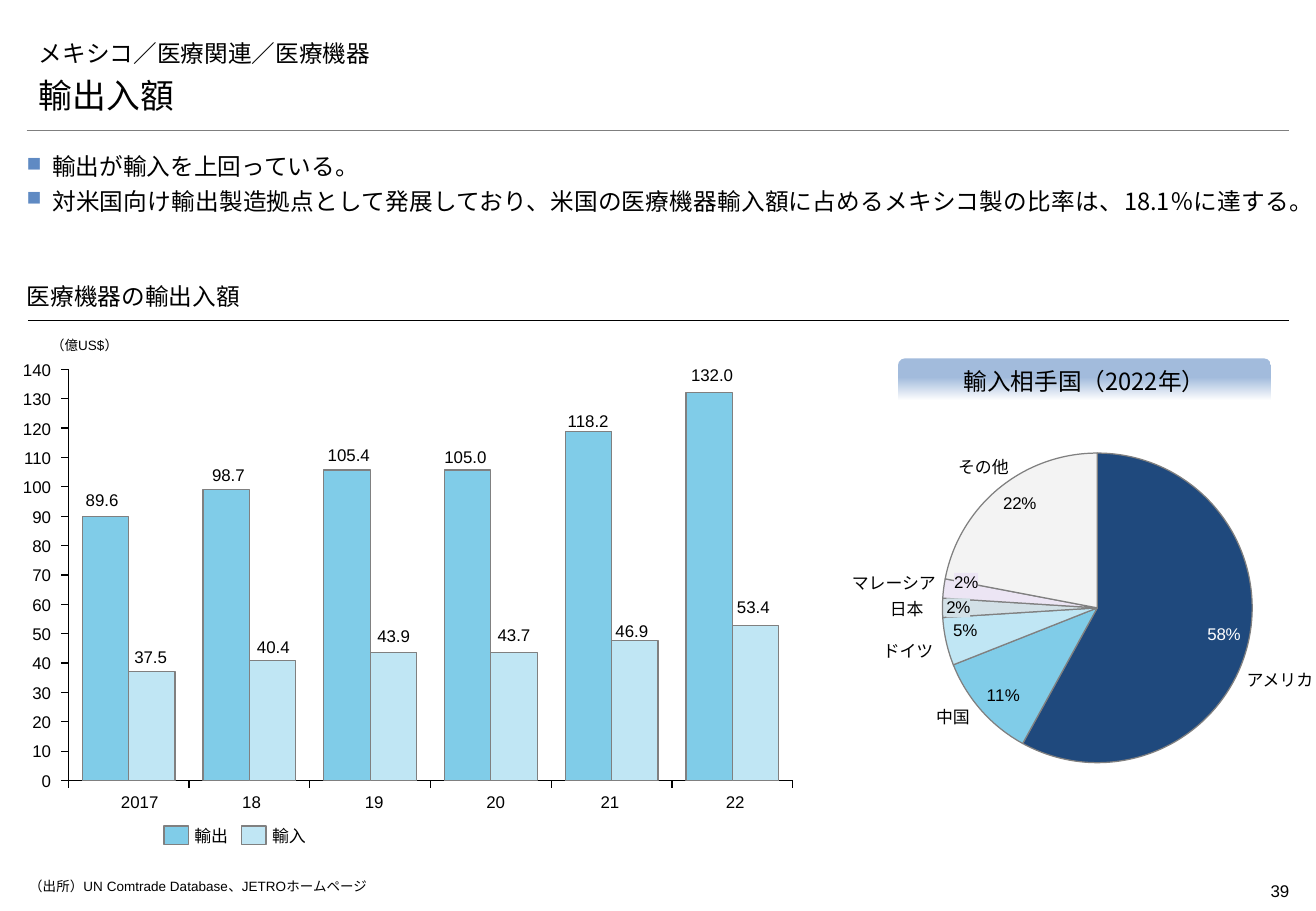
import pptx
import pptx.chart.data
import pptx.dml.color
import pptx.enum.chart
import pptx.enum.shapes
import pptx.enum.text
import pptx.oxml
import pptx.oxml.ns
import pptx.util
import lxml.etree

EMU_PER_PX = 9144
COLORS = {
    "text": "000000", "rule": "7F7F7F", "outline": "808080", "bullet": "5F8AC3",
    "export": "80CCE8", "import": "C0E6F4", "banner": "A2BBDC", "white": "FFFFFF",
    "usa": "1F497D", "japan": "D2E0E6", "malaysia": "ECE5F4", "other": "F3F3F3",
}
ARIAL, HEADING, GOTHIC = "Arial", "Montserrat", "Noto Sans CJK JP"
ALIGN = pptx.enum.text.PP_ALIGN
ANCHOR = pptx.enum.text.MSO_ANCHOR
SHAPE = pptx.enum.shapes.MSO_SHAPE
CHART = pptx.enum.chart
QN = pptx.oxml.ns.qn


def px(value):
    return pptx.util.Emu(round(value * EMU_PER_PX))


def rgb(name):
    return pptx.dml.color.RGBColor.from_string(COLORS[name])


def add_span(para, text, size, font):
    span = para.add_run()
    span.text = text
    span.font.size = pptx.util.Pt(size)
    span.font.color.rgb = rgb("text")
    span.font.name = font
    east_asian = lxml.etree.SubElement(span._r.get_or_add_rPr(), QN("a:ea"))
    east_asian.set("typeface", GOTHIC)


def add_text(page, box, text, size=10, font=ARIAL, align=ALIGN.LEFT,
             anchor=ANCHOR.MIDDLE, insets=(0, 0, 0, 0), wrap=False):
    shape = page.shapes.add_textbox(*map(px, box))
    frame = shape.text_frame
    frame.word_wrap = wrap
    frame.vertical_anchor = anchor
    (frame.margin_left, frame.margin_top,
     frame.margin_right, frame.margin_bottom) = map(px, insets)
    para = frame.paragraphs[0]
    para.alignment = align
    if text:
        add_span(para, text, size, font)
    return shape


def add_rule(page, left, right, y, color, width):
    rule = page.shapes.add_connector(
        pptx.enum.shapes.MSO_CONNECTOR.STRAIGHT, px(left), px(y), px(right), px(y))
    rule.line.color.rgb = rgb(color)
    rule.line.width = pptx.util.Pt(width)
    lxml.etree.SubElement(rule._element.spPr, QN("a:effectLst"))


def set_outline(line, color):
    line.color.rgb = rgb(color)
    line.width = pptx.util.Pt(0.75)


def set_plot_area(chart, x, y, width, height):
    area = chart._chartSpace.chart.plotArea
    for layout in area.findall(QN("c:layout")):
        area.remove(layout)
    layout = lxml.etree.Element(QN("c:layout"))
    manual = lxml.etree.SubElement(layout, QN("c:manualLayout"))
    for tag, value in (("layoutTarget", "inner"), ("xMode", "edge"), ("yMode", "edge"),
                       ("x", x), ("y", y), ("w", width), ("h", height)):
        lxml.etree.SubElement(manual, QN("c:" + tag)).set("val", str(value))
    area.insert(0, layout)


def add_plain_chart(page, box, kind, series):
    data = pptx.chart.data.CategoryChartData()
    data.categories = ["1", "2", "3", "4", "5", "6"]
    for name, values in series:
        data.add_series(name, values)
    chart = page.shapes.add_chart(kind, *map(px, box), data).chart
    chart.has_legend = chart.has_title = False
    chart.font.size = pptx.util.Pt(10)
    chart.font.name = ARIAL
    chart.font.color.rgb = rgb("text")
    return chart


def add_header(page, box):
    left, top, width, height = box
    insets = (10, 5, 10, 5)
    add_text(page, (left, top, width, 34), "メキシコ／医療関連／医療機器", 14, HEADING,
             anchor=ANCHOR.BOTTOM, insets=insets, wrap=True)
    add_text(page, (left, top + 30, width, 44), "輸出入額", 20, HEADING,
             anchor=ANCHOR.BOTTOM, insets=insets, wrap=True)
    add_rule(page, left, left + width, top + height, "rule", 0.25)


def add_bullets(page, box):
    frame = add_text(page, box, "", anchor=ANCHOR.TOP, wrap=True).text_frame
    points = (
        ("輸出が輸入を上回っている。", ARIAL),
        ("対米国向け輸出製造拠点として発展しており、米国の医療機器輸入額に占める"
         "メキシコ製の比率は、18.1％に達する。", GOTHIC),
    )
    for index, (text, font) in enumerate(points):
        para = frame.add_paragraph() if index else frame.paragraphs[0]
        settings = para._p.get_or_add_pPr()
        settings.set("marL", str(px(21)))
        settings.set("indent", str(-px(21)))
        color = lxml.etree.SubElement(settings, QN("a:buClr"))
        lxml.etree.SubElement(color, QN("a:srgbClr")).set("val", COLORS["bullet"])
        lxml.etree.SubElement(settings, QN("a:buSzPct")).set("val", "85000")
        lxml.etree.SubElement(settings, QN("a:buChar")).set("char", "■")
        para.alignment = ALIGN.JUSTIFY
        para.line_spacing = 1.1
        para.space_after = pptx.util.Pt(2)
        add_span(para, text, 14, font)


def add_section_heading(page, box):
    left, top, width, height = box
    add_text(page, box, "医療機器の輸出入額", 14, HEADING, anchor=ANCHOR.BOTTOM,
             insets=(0, 5, 0, 8), wrap=True)
    add_rule(page, left + 1, left + width, top + height + 1, "text", 0.75)


def add_trade_chart(page, box):
    left, top, width, height = box
    chart = add_plain_chart(page, box, CHART.XL_CHART_TYPE.COLUMN_CLUSTERED, (
        ("Series 1", (68, 75, 80, 80, 90, 100)),
        ("Series 2", (28, 31, 33, 33, 36, 40))))
    set_plot_area(chart, 0.015, 0.025, 0.971, 0.949)
    plot = chart.plots[0]
    plot.gap_width, plot.overlap, plot.vary_by_categories = 60, 0, False
    for series, color in zip(plot.series, ("export", "import")):
        series.format.fill.solid()
        series.format.fill.fore_color.rgb = rgb(color)
        set_outline(series.format.line, "outline")
    for axis in (chart.category_axis, chart.value_axis):
        axis.has_major_gridlines = False
        axis.major_tick_mark = CHART.XL_TICK_MARK.OUTSIDE
        axis.tick_label_position = CHART.XL_TICK_LABEL_POSITION.NONE
        set_outline(axis.format.line, "text")
    chart.value_axis.minimum_scale = 0
    chart.value_axis.maximum_scale = 106
    chart.value_axis.major_unit = 7.57

    add_text(page, (left - 5, top - 23, 75, 24), "（億US$）", 8, wrap=True)
    for step in range(15):
        add_text(page, (left - 45, top + 339 - step * 338 / 14, 40, 17),
                 str(step * 10), align=ALIGN.RIGHT)
    for year, center in zip(("2017", "18", "19", "20", "21", "22"),
                            (68, 160, 261, 361, 455, 558)):
        add_text(page, (left + center - 25, top + height, 50, 17), year,
                 align=ALIGN.CENTER, anchor=ANCHOR.TOP)
    bar_labels = (
        ("89.6", 37, 108), ("98.7", 141, 87), ("105.4", 240, 71),
        ("105.0", 336, 72), ("118.2", 437, 43), ("132.0", 539, 5),
        ("37.5", 77, 237), ("40.4", 178, 229), ("43.9", 277, 220),
        ("43.7", 376, 219), ("46.9", 473, 216), ("53.4", 573, 196),
    )
    for text, center, offset in bar_labels:
        add_text(page, (left + center - 30, top + offset, 60, 17), text,
                 align=ALIGN.CENTER, anchor=ANCHOR.BOTTOM, insets=(2, 0, 2, 0))
    for index, (name, color) in enumerate((("輸出", "export"), ("輸入", "import"))):
        key_left = left + 88 + index * 64
        key = page.shapes.add_shape(SHAPE.RECTANGLE, px(key_left), px(top + 385), px(20), px(15))
        key.shadow.inherit = False
        key.fill.solid()
        key.fill.fore_color.rgb = rgb(color)
        set_outline(key.line, "outline")
        add_text(page, (key_left + 25, top + 385, 36, 17), name)


def style_slice_label(point, font_color, fill, shift, number_format):
    label = point.data_label
    label.font.size = pptx.util.Pt(10)
    label.font.color.rgb = rgb(font_color)
    label.position = CHART.XL_LABEL_POSITION.INSIDE_END
    namespaces = pptx.oxml.ns.nsdecls("c", "a")
    parts = [f'<c:layout {namespaces}><c:manualLayout><c:x val="{shift[0]}"/>'
             f'<c:y val="{shift[1]}"/></c:manualLayout></c:layout>',
             f'<c:numFmt {namespaces} formatCode="{number_format}" sourceLinked="0"/>']
    element = label._dLbl
    if fill:
        for blank in element.findall(QN("c:spPr")):
            element.remove(blank)
        parts.append(f'<c:spPr {namespaces}><a:solidFill><a:srgbClr val="{COLORS[fill]}"/>'
                     '</a:solidFill></c:spPr>')
    for position, part in enumerate(parts, 1):
        element.insert(position, pptx.oxml.parse_xml(part))


def add_partner_chart(page, box):
    left, top, width, height = box
    banner = page.shapes.add_shape(SHAPE.ROUND_2_SAME_RECTANGLE,
                                   px(left - 25), px(top - 69), px(307), px(35))
    banner.shadow.inherit = False
    banner.line.fill.background()
    banner.fill.gradient()
    banner.fill.gradient_angle = 270
    for stop, color, place in zip(banner.fill.gradient_stops, ("banner", "white"), (0.45, 1)):
        stop.color.rgb = rgb(color)
        stop.position = place
    banner.text_frame.vertical_anchor = ANCHOR.MIDDLE
    para = banner.text_frame.paragraphs[0]
    para.alignment = ALIGN.CENTER
    add_span(para, "輸入相手国（2022年）", 14, GOTHIC)

    chart = add_plain_chart(page, box, CHART.XL_CHART_TYPE.PIE,
                            (("Series 1", (58, 11, 5, 2, 2, 22)),))
    set_plot_area(chart, 0.041, 0.033, 0.926, 0.934)
    series = chart.plots[0].series[0]
    for index, color in enumerate(("usa", "export", "import", "japan", "malaysia", "other")):
        point = series.points[index]
        point.format.fill.solid()
        point.format.fill.fore_color.rgb = rgb(color)
        set_outline(point.format.line, "outline")
    labels = series.data_labels
    labels.show_value = True
    labels.number_format = '#,##0"%"'
    labels.number_format_is_linked = False
    labels.position = CHART.XL_LABEL_POSITION.INSIDE_END
    for index, font_color, fill, shift in (
            (0, "white", None, (0, 0)), (3, "text", "japan", (-0.01, 0)),
            (4, "text", "malaysia", (0.01, -0.05))):
        style_slice_label(series.points[index], font_color, fill, shift,
                          "#,##0&quot;%&quot;")

    add_text(page, (left + 262, top + 187, 57, 17), "アメリカ")
    for country, right, offset in (("中国", 34, 218), ("日本", -4, 129), ("ドイツ", 4, 163),
                                   ("マレーシア", 6, 107), ("その他", 66, 12)):
        add_text(page, (left + right - 85, top + offset, 85, 17), country, align=ALIGN.RIGHT)


def add_footer(page, box):
    left, top, width, height = box
    source = add_text(page, (left + 2, top + 3, 748, 24),
                      "（出所）UN Comtrade Database、JETROホームページ", 8,
                      anchor=ANCHOR.TOP, wrap=True)
    settings = source.text_frame.paragraphs[0]._p.get_or_add_pPr()
    settings.set("marL", str(px(37)))
    settings.set("indent", str(-px(37)))
    add_text(page, (left + width - 79, top, 79, height), "39", align=ALIGN.RIGHT,
             anchor=ANCHOR.TOP, insets=(0, 5, 0, 5), wrap=True)


def main():
    deck = pptx.Presentation()
    deck.slide_width, deck.slide_height = px(1083), px(750)
    page = deck.slides.add_slide(deck.slide_layouts[6])
    add_header(page, (22, 26, 1039, 81))
    add_bullets(page, (22, 123, 1039, 53))
    add_section_heading(page, (22, 232, 1039, 31))
    add_trade_chart(page, (47, 295, 614, 357))
    add_partner_chart(page, (764, 364, 276, 273))
    add_footer(page, (22, 720, 1039, 27))
    deck.save("out.pptx")


if __name__ == "__main__":
    main()
